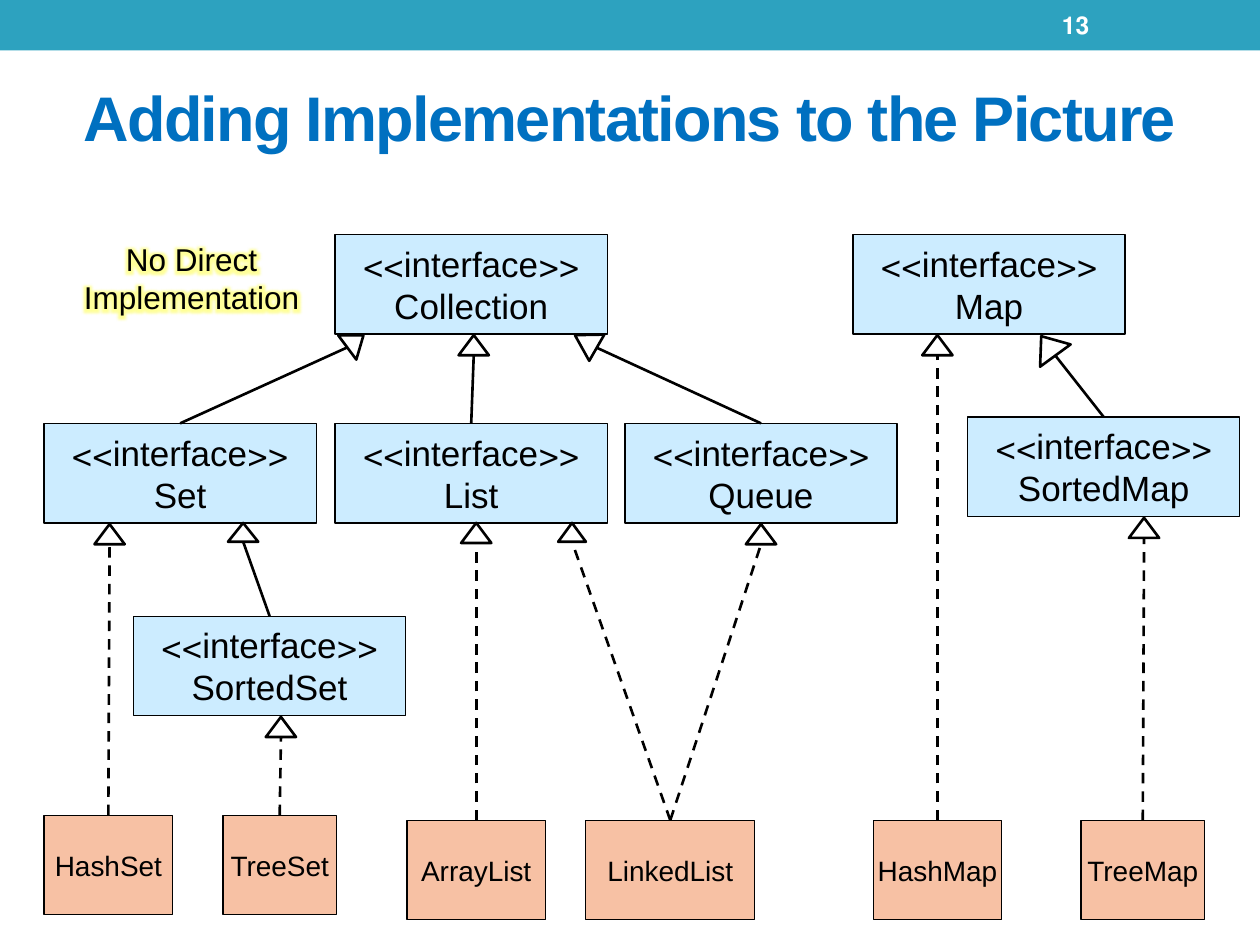
from dataclasses import dataclass
from math import cos, radians, sin

from lxml.etree import SubElement
from pptx import Presentation
from pptx.dml.color import RGBColor
from pptx.enum.dml import MSO_LINE
from pptx.enum.shapes import MSO_CONNECTOR, MSO_SHAPE
from pptx.enum.text import MSO_ANCHOR, PP_ALIGN
from pptx.oxml import parse_xml
from pptx.oxml.ns import nsdecls, qn
from pptx.util import Inches, Pt


@dataclass(frozen=True)
class Theme:
    font: str = "Arial"
    band: str = "2DA2BF"
    title: str = "0070C0"
    ink: str = "000000"
    white: str = "FFFFFF"
    interface: str = "CCECFF"
    implementation: str = "F7C1A4"
    glow: str = "FFFF00"
    title_size: int = 36
    interface_size: int = 20
    label_size: int = 18
    class_size: int = 16
    number_size: int = 14
    box_line: float = 0.75
    arrow_line: float = 1.5


THEME = Theme()
BOX_HEIGHT = 0.79
INTERFACE_WIDTH = 2.16

# Interfaces: name, left, top
INTERFACES = [
    ("Collection", 2.66, 1.86), ("Map", 6.77, 1.86),
    ("Set", 0.35, 3.36), ("List", 2.66, 3.36), ("Queue", 4.96, 3.36),
    ("SortedMap", 7.68, 3.31), ("SortedSet", 1.06, 4.89),
]

# Implementations: name, left, top, width
IMPLEMENTATIONS = [
    ("HashSet", 0.35, 6.47, 1.02), ("TreeSet", 1.77, 6.47, 0.9),
    ("ArrayList", 3.23, 6.51, 1.1), ("LinkedList", 4.65, 6.51, 1.34),
    ("HashMap", 6.93, 6.51, 1.02), ("TreeMap", 8.58, 6.51, 0.98),
]

# Arrowheads: child, left, top, width, height, rotation
EXTENDS = [
    ("Set", 2.7, 2.63, 0.24, 0.16, 53.3),
    ("List", 3.64, 2.66, 0.24, 0.16, 0),
    ("Queue", 4.53, 2.61, 0.24, 0.2, 299.9),
    ("SortedSet", 1.81, 4.15, 0.24, 0.15, 0),
    ("SortedMap", 8.17, 2.65, 0.3, 0.19, 323.9),
]
IMPLEMENTS = [
    ("HashSet", 0.75, 4.16, 0.24, 0.16, 0),
    ("TreeSet", 2.11, 5.69, 0.24, 0.16, 0),
    ("ArrayList", 3.66, 4.15, 0.24, 0.16, 0),
    ("LinkedList", 4.43, 4.15, 0.22, 0.15, 0),
    ("LinkedList", 5.92, 4.16, 0.24, 0.16, 0),
    ("HashMap", 7.32, 2.66, 0.24, 0.16, 0),
    ("TreeMap", 8.96, 4.11, 0.24, 0.16, 0),
]


def color(value):
    return RGBColor.from_string(value)


def write(shape, *lines, size, ink=THEME.ink, bold=False, align=PP_ALIGN.CENTER,
          anchor=MSO_ANCHOR.MIDDLE, wrap=True):
    """Fill a shape with one right-to-left paragraph per line and return the runs."""
    frame = shape.text_frame
    frame.word_wrap = wrap
    frame.vertical_anchor = anchor
    runs = []
    for index, line in enumerate(lines):
        paragraph = frame.add_paragraph() if index else frame.paragraphs[0]
        paragraph.alignment = align
        paragraph._p.get_or_add_pPr().set("rtl", "1")
        run = paragraph.add_run()
        run.text = line
        run.font.name = THEME.font
        run.font.size = Pt(size)
        run.font.bold = bold
        run.font.color.rgb = color(ink)
        runs.append(run)
    return runs


def add_shape(slide, kind, box, fill=None, line_width=None):
    shape = slide.shapes.add_shape(kind, *map(Inches, box))
    shape.shadow.inherit = False
    if fill:
        shape.fill.solid()
        shape.fill.fore_color.rgb = color(fill)
    else:
        shape.fill.background()
    if line_width:
        shape.line.color.rgb = color(THEME.ink)
        shape.line.width = Pt(line_width)
    else:
        shape.line.fill.background()
    return shape


def add_box(slide, lines, left, top, width, fill, size):
    box = add_shape(slide, MSO_SHAPE.FLOWCHART_PROCESS,
                    (left, top, width, BOX_HEIGHT), fill, THEME.box_line)
    write(box, *lines, size=size, wrap=False)
    return box


def add_arrow(slide, child, left, top, width, height, rotation, dashed):
    """Join a child's top side to the base of a hollow triangle."""
    head = add_shape(slide, MSO_SHAPE.FLOWCHART_EXTRACT,
                     (left, top, width, height), line_width=THEME.arrow_line)
    head.rotation = rotation
    angle = radians(rotation)
    end_x = left + width / 2 - height / 2 * sin(angle)
    end_y = top + height / 2 + height / 2 * cos(angle)

    line = slide.shapes.add_connector(
        MSO_CONNECTOR.STRAIGHT, 0, 0, Inches(end_x), Inches(end_y))
    line.begin_connect(child, 0)
    line.line.color.rgb = color(THEME.ink)
    line.line.width = Pt(THEME.arrow_line)
    if dashed:
        line.line.dash_style = MSO_LINE.DASH
    SubElement(line._element.spPr, qn("a:effectLst"))


def add_text(slide, text, box, **text_format):
    shape = slide.shapes.add_textbox(*map(Inches, box))
    return write(shape, text, **text_format)


def add_glow(run):
    effect = parse_xml(
        f'<a:effectLst {nsdecls("a")}><a:glow rad="139700">'
        f'<a:srgbClr val="{THEME.glow}"><a:alpha val="40000"/></a:srgbClr>'
        '</a:glow></a:effectLst>')
    run.font._element.find(qn("a:solidFill")).addnext(effect)


def add_title(slide, text):
    title = slide.shapes.title
    title.left, title.top = Inches(0.45), Inches(0.3)
    title.width, title.height = Inches(9.1), Inches(1.25)
    run, = write(title, text, size=THEME.title_size, ink=THEME.title, bold=True)
    run.font._element.set("spc", "-100")


def main():
    presentation = Presentation()
    presentation.slide_width, presentation.slide_height = Inches(10), Inches(7.5)
    slide = presentation.slides.add_slide(presentation.slide_layouts[5])

    # Header band, slide number and title
    add_shape(slide, MSO_SHAPE.RECTANGLE, (0, 0, 10, 0.4), THEME.band)
    add_text(slide, "13", (8.33, 0.02, 1.17, 0.36), size=THEME.number_size,
             ink=THEME.white, bold=True, align=PP_ALIGN.LEFT)
    add_title(slide, "Adding Implementations to the Picture")

    # Note beside Collection
    note, = add_text(slide, "No Direct Implementation", (0.56, 1.86, 1.92, 0.7),
                     size=THEME.label_size, anchor=MSO_ANCHOR.TOP)
    add_glow(note)

    # Interfaces and the classes that implement them
    boxes = {}
    for name, left, top in INTERFACES:
        boxes[name] = add_box(slide, ("<<interface>>", name), left, top, INTERFACE_WIDTH,
                              THEME.interface, THEME.interface_size)
    for name, left, top, width in IMPLEMENTATIONS:
        boxes[name] = add_box(slide, (name,), left, top, width,
                              THEME.implementation, THEME.class_size)

    # Solid arrows extend, dashed arrows implement
    for arrows, dashed in ((EXTENDS, False), (IMPLEMENTS, True)):
        for name, *head in arrows:
            add_arrow(slide, boxes[name], *head, dashed=dashed)

    presentation.save("out.pptx")


if __name__ == "__main__":
    main()
